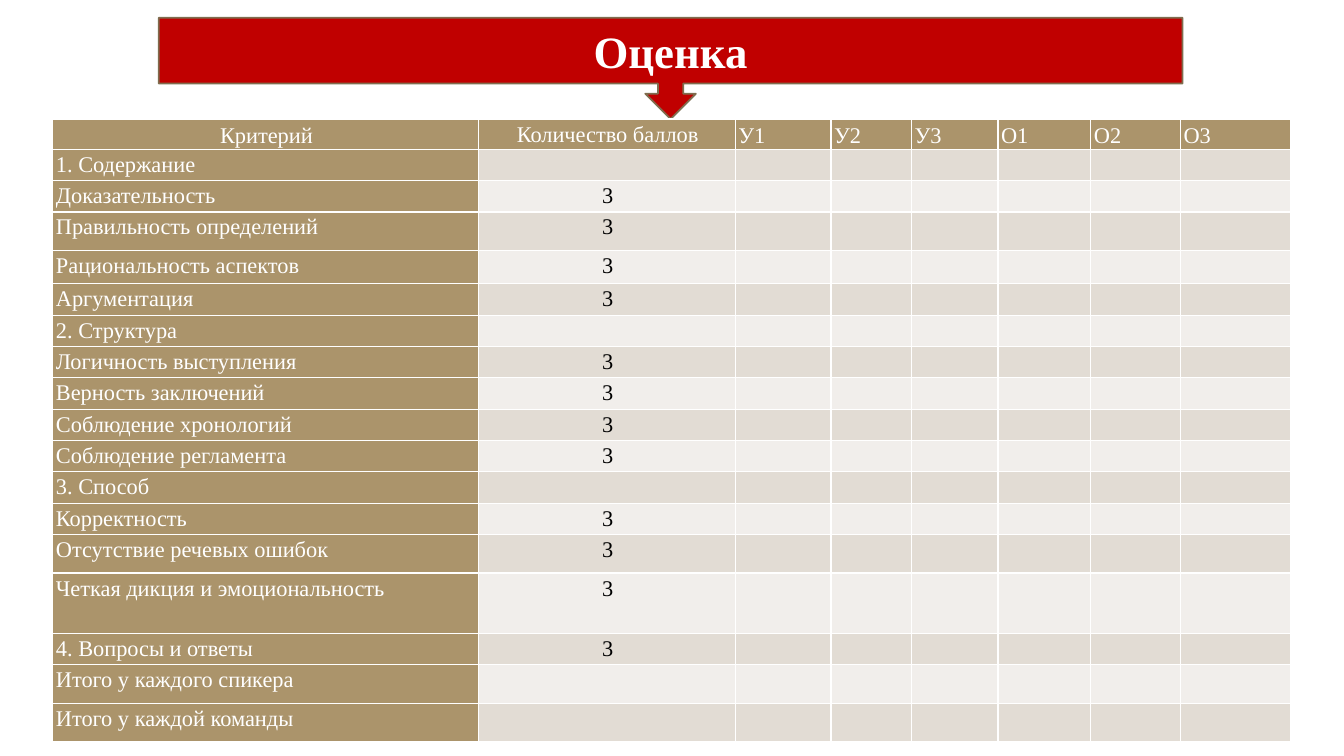
from pptx import Presentation
from pptx.dml.color import RGBColor
from pptx.enum.shapes import MSO_SHAPE
from pptx.enum.text import MSO_ANCHOR, PP_ALIGN
from pptx.util import Cm, Pt

FONT = "Times New Roman"
RED = RGBColor(0xC0, 0x00, 0x00)
BROWN = RGBColor(0x7F, 0x6D, 0x4F)
TAN = RGBColor(0xAB, 0x94, 0x6B)
DARK = RGBColor(0xE2, 0xDC, 0xD4)
LIGHT = RGBColor(0xF1, 0xEE, 0xEB)
WHITE = RGBColor(0xFF, 0xFF, 0xFF)
BLACK = RGBColor(0x00, 0x00, 0x00)

HEAD = ["Критерий", "Количество баллов", "У1", "У2", "У3", "О1", "О2", "О3"]
WIDTHS = [10.72, 6.48, 2.41, 2.03, 2.18, 2.34, 2.26, 2.77]
HEAD_H = 0.76
# Criterion, points, row height in cm
ROWS = [
    ("1. Содержание", "", 0.79),
    ("Доказательность", "3", 0.79),
    ("Правильность определений", "3", 0.97),
    ("Рациональность аспектов", "3", 0.84),
    ("Аргументация", "3", 0.79),
    ("2. Структура", "", 0.79),
    ("Логичность выступления", "3", 0.79),
    ("Верность заключений", "3", 0.79),
    ("Соблюдение хронологий", "3", 0.79),
    ("Соблюдение регламента", "3", 0.79),
    ("3. Способ", "", 0.79),
    ("Корректность", "3", 0.79),
    ("Отсутствие речевых ошибок", "3", 0.97),
    ("Четкая дикция и эмоциональность", "3", 1.52),
    ("4. Вопросы и ответы", "3", 0.79),
    ("Итого у каждого спикера", "", 0.97),
    ("Итого у каждой команды", "", 0.97),
]


def style(par, size, color, align, bold=False):
    par.alignment = align
    font = par.font
    font.name, font.size, font.bold = FONT, Pt(size), bold
    font.color.rgb = color


def add_title(slide, left, top, width, height):
    # Red callout pointing down at the table
    box = slide.shapes.add_shape(MSO_SHAPE.DOWN_ARROW_CALLOUT,
                                 left, top, width, height)
    box.shadow.inherit = False
    box.fill.solid()
    box.fill.fore_color.rgb = RED
    box.line.color.rgb = BROWN
    box.line.width = Pt(1.25)

    # Title over the body of the callout
    title = slide.shapes.title
    title.left, title.top, title.width = left, top, width
    title.height = int(height * box.adjustments[3])
    box.element.addnext(title.element)
    frame = title.text_frame
    frame.text = "Оценка"
    frame.vertical_anchor = MSO_ANCHOR.MIDDLE
    style(frame.paragraphs[0], 32, WHITE, PP_ALIGN.CENTER, True)


def fill_cell(cell, text, fill, color, align):
    cell.fill.solid()
    cell.fill.fore_color.rgb = fill
    cell.margin_left, cell.margin_right = Cm(0.08), Cm(0.03)
    cell.margin_top = Cm(0.04 if text else 0)
    cell.margin_bottom = 0
    if text:
        cell.text = text
        par = cell.text_frame.paragraphs[0]
        par.line_spacing = 1.06
        style(par, 16, color, align)


def add_scores(slide, left, top, width, height):
    grid = slide.shapes.add_table(len(ROWS) + 1, len(HEAD),
                                  left, top, width, height).table
    for col, size in zip(grid.columns, WIDTHS):
        col.width = Cm(size)

    # Header row
    grid.rows[0].height = Cm(HEAD_H)
    for c, text in enumerate(HEAD):
        cell = grid.cell(0, c)
        align = PP_ALIGN.CENTER if c < 2 else PP_ALIGN.LEFT
        fill_cell(cell, text, TAN, WHITE, align)
        if c != 1:
            cell.vertical_anchor = MSO_ANCHOR.MIDDLE

    # Banded criteria rows
    for r, (name, points, size) in enumerate(ROWS, 1):
        grid.rows[r].height = Cm(size)
        band = DARK if r % 2 else LIGHT
        fill_cell(grid.cell(r, 0), name, TAN, WHITE, PP_ALIGN.LEFT)
        fill_cell(grid.cell(r, 1), points, band, BLACK, PP_ALIGN.CENTER)
        for c in range(2, len(HEAD)):
            fill_cell(grid.cell(r, c), "", band, BLACK, PP_ALIGN.LEFT)


def main():
    deck = Presentation()
    deck.slide_width, deck.slide_height = Cm(33.87), Cm(19.05)
    slide = deck.slides.add_slide(deck.slide_layouts[5])
    add_title(slide, Cm(4), Cm(0.45), Cm(25.8), Cm(2.55))
    add_scores(slide, Cm(1.33), Cm(3), Cm(sum(WIDTHS)),
               Cm(HEAD_H + sum(row[2] for row in ROWS)))
    deck.save("out.pptx")


if __name__ == "__main__":
    main()
